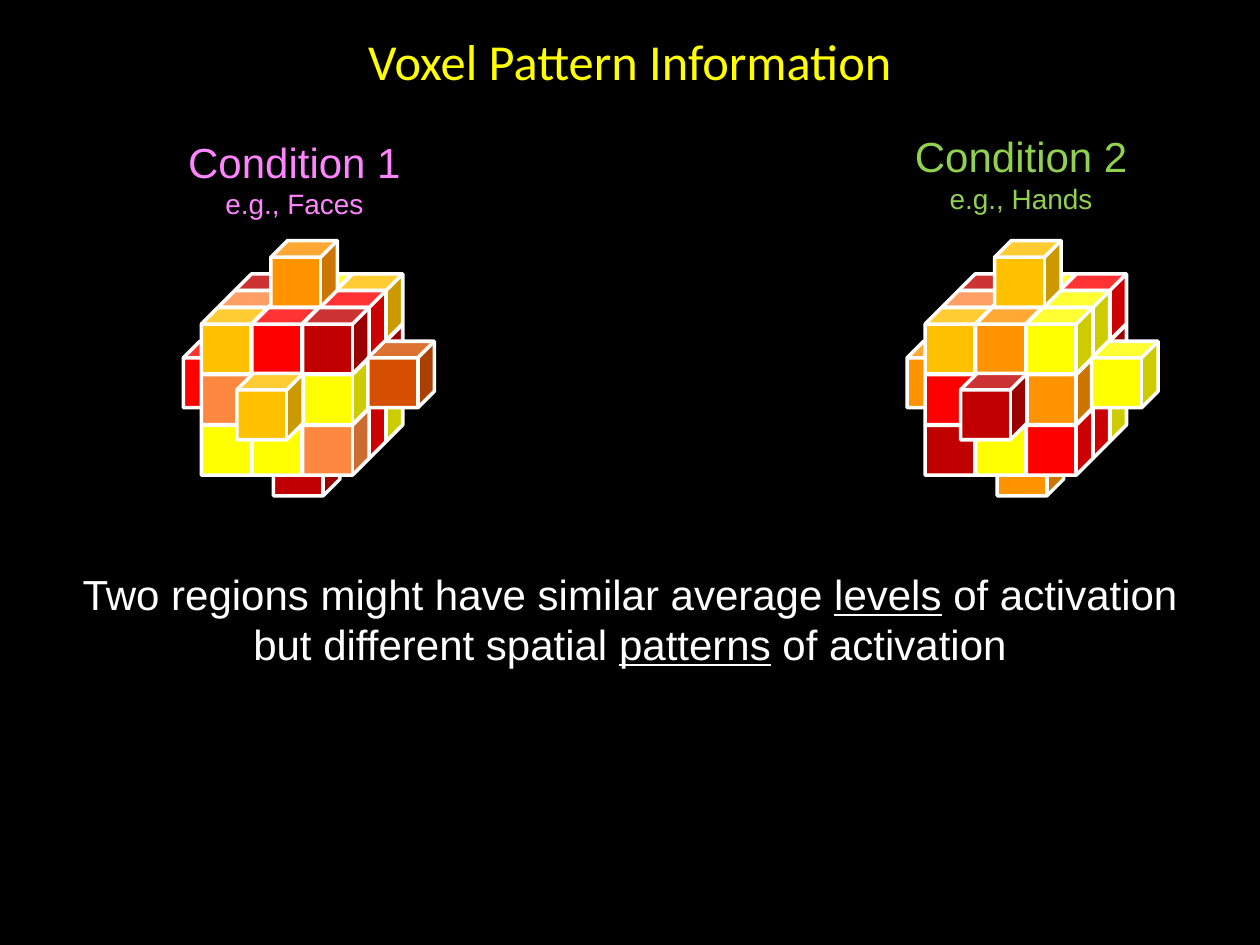
"""Build a slide comparing voxel activation patterns for two conditions."""
import pptx
import pptx.dml.color
import pptx.enum.shapes
import pptx.enum.text
import pptx.util

Cm = pptx.util.Cm
RGBColor = pptx.dml.color.RGBColor

BLACK = RGBColor(0x00, 0x00, 0x00)
WHITE = RGBColor(0xFF, 0xFF, 0xFF)
PINK = RGBColor(0xFF, 0x85, 0xFF)
GREEN = RGBColor(0x92, 0xD0, 0x50)
YELLOW = RGBColor(0xFF, 0xFF, 0x00)
GOLD = RGBColor(0xFF, 0xC0, 0x00)
AMBER = RGBColor(0xFF, 0xC0, 0x2B)
ORANGE = RGBColor(0xFF, 0x93, 0x00)
SALMON = RGBColor(0xFF, 0x88, 0x40)
RUST = RGBColor(0xD4, 0x50, 0x00)
RED = RGBColor(0xFF, 0x00, 0x00)
CRIMSON = RGBColor(0xC0, 0x00, 0x00)
MAROON = RGBColor(0x80, 0x00, 0x00)

CUBE_SIZE = 1.34
STEP = 1.02
DEPTH_STEP = 0.34
FRONT_TOP = 6.2

deck = pptx.Presentation()
deck.slide_width = Cm(25.4)
deck.slide_height = Cm(19.05)
page = deck.slides.add_slide(deck.slide_layouts[6])
page.background.fill.solid()
page.background.fill.fore_color.rgb = BLACK


def add_text(left, top, width, height, paragraphs, font, color, wrap=True):
    box = page.shapes.add_textbox(Cm(left), Cm(top), Cm(width), Cm(height))
    frame = box.text_frame
    frame.word_wrap = wrap
    for index, (size, pieces) in enumerate(paragraphs):
        para = frame.paragraphs[0] if index == 0 else frame.add_paragraph()
        para.alignment = pptx.enum.text.PP_ALIGN.CENTER
        for words, underlined in pieces:
            span = para.add_run()
            span.text = words
            span.font.name = font
            span.font.size = pptx.util.Pt(size)
            span.font.color.rgb = color
            span.font.underline = underlined
    return frame


title = add_text(1.27, 0.76, 22.86, 0.91,
                 [(28.8, [("Voxel Pattern Information", False)])], "Calibri", YELLOW)
title.vertical_anchor = pptx.enum.text.MSO_ANCHOR.MIDDLE

message = [
    ("Two regions might have similar average ", False),
    ("levels", True),
    (" of activation but different spatial ", False),
    ("patterns", True),
    (" of activation", False),
]
add_text(1.27, 11.33, 22.86, 5.69, [(24, message)], "Arial", WHITE)

conditions = [
    ("Condition 1", "e.g., Faces", 3.51, 2.62, PINK),
    ("Condition 2", "e.g., Hands", 18.16, 2.51, GREEN),
]
for name, example, left, top, color in conditions:
    add_text(left, top, 4.85, 1.96, [(24, [(name, False)]), (16, [(example, False)])],
             "Arial", color, wrap=False)

hidden_voxels = [(-0.69, 1, 1), (1.09, 2.74, 1)]
top_voxels = [(column, 0, depth) for column in (0, 1) for depth in (2, 1)]
side_voxels = [(2, row, depth) for row in (2, 1, 0) for depth in (2, 1)]
front_voxels = [(column, row, 0) for row in (2, 1, 0) for column in range(3)]
outer_voxels = [(0.7, 1.3, 0), (1.04, -0.99, 1), (2.96, 1, 1)]
voxels = hidden_voxels + top_voxels + side_voxels + front_voxels + outer_voxels

faces_pattern = [
    RED, CRIMSON,
    CRIMSON, SALMON, YELLOW, AMBER,
    YELLOW, RED, CRIMSON, MAROON, GOLD, RED,
    YELLOW, YELLOW, SALMON,
    SALMON, AMBER, YELLOW,
    GOLD, RED, CRIMSON,
    GOLD, ORANGE, RUST,
]
hands_pattern = [
    ORANGE, ORANGE,
    CRIMSON, SALMON, YELLOW, AMBER,
    YELLOW, RED, CRIMSON, MAROON, RED, YELLOW,
    CRIMSON, YELLOW, RED,
    RED, AMBER, ORANGE,
    GOLD, ORANGE, YELLOW,
    CRIMSON, GOLD, YELLOW,
]

for front_left, pattern in [(4.06, faces_pattern), (18.65, hands_pattern)]:
    region = page.shapes.add_group_shape()
    for (column, row, depth), color in zip(voxels, pattern):
        left = front_left + column * STEP + depth * DEPTH_STEP
        top = FRONT_TOP + row * STEP - depth * DEPTH_STEP
        voxel = region.shapes.add_shape(
            pptx.enum.shapes.MSO_SHAPE.CUBE,
            Cm(left), Cm(top), Cm(CUBE_SIZE), Cm(CUBE_SIZE))
        voxel.shadow.inherit = False
        voxel.fill.solid()
        voxel.fill.fore_color.rgb = color
        voxel.line.color.rgb = WHITE
        voxel.line.width = pptx.util.Pt(2)

deck.save("out.pptx")
